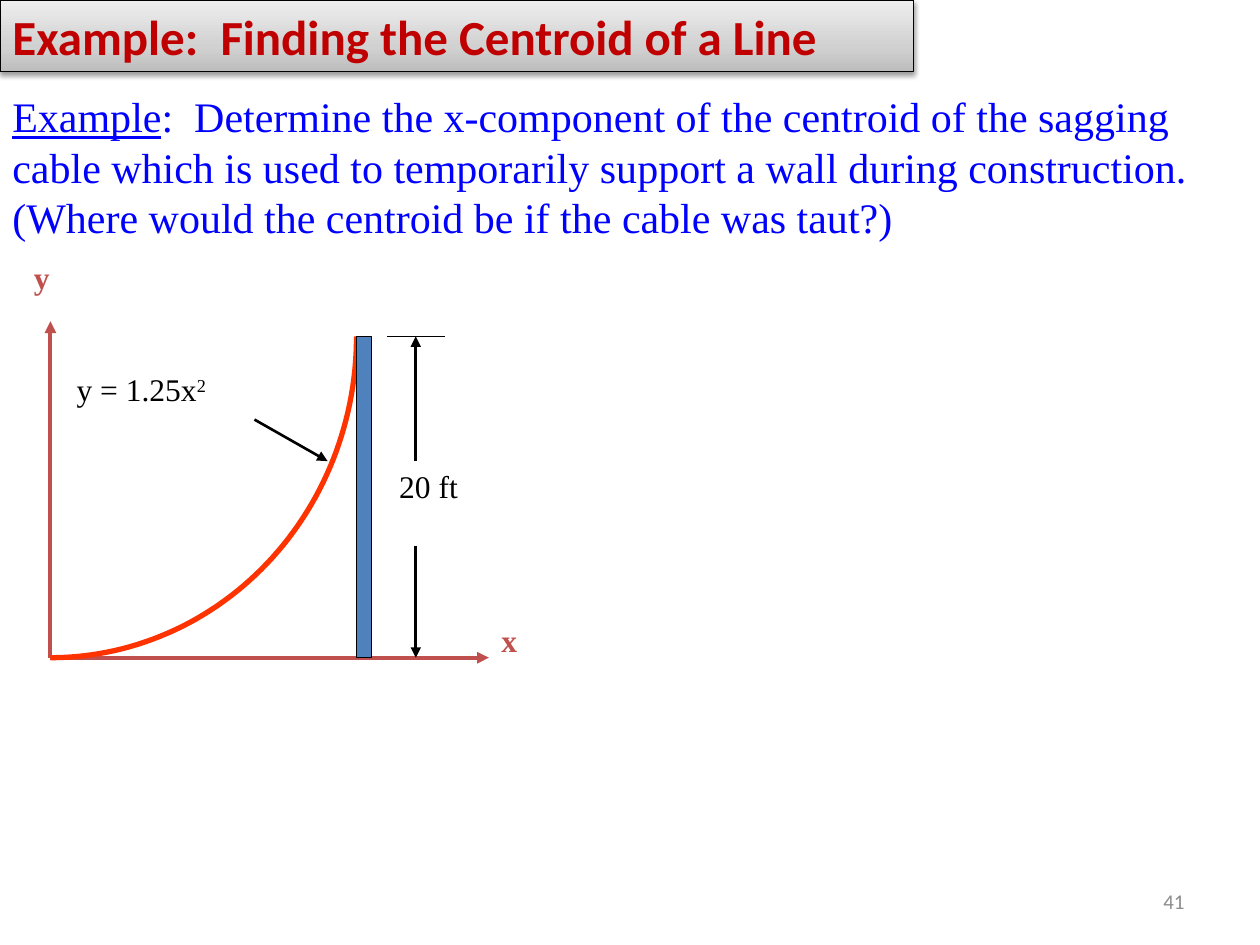
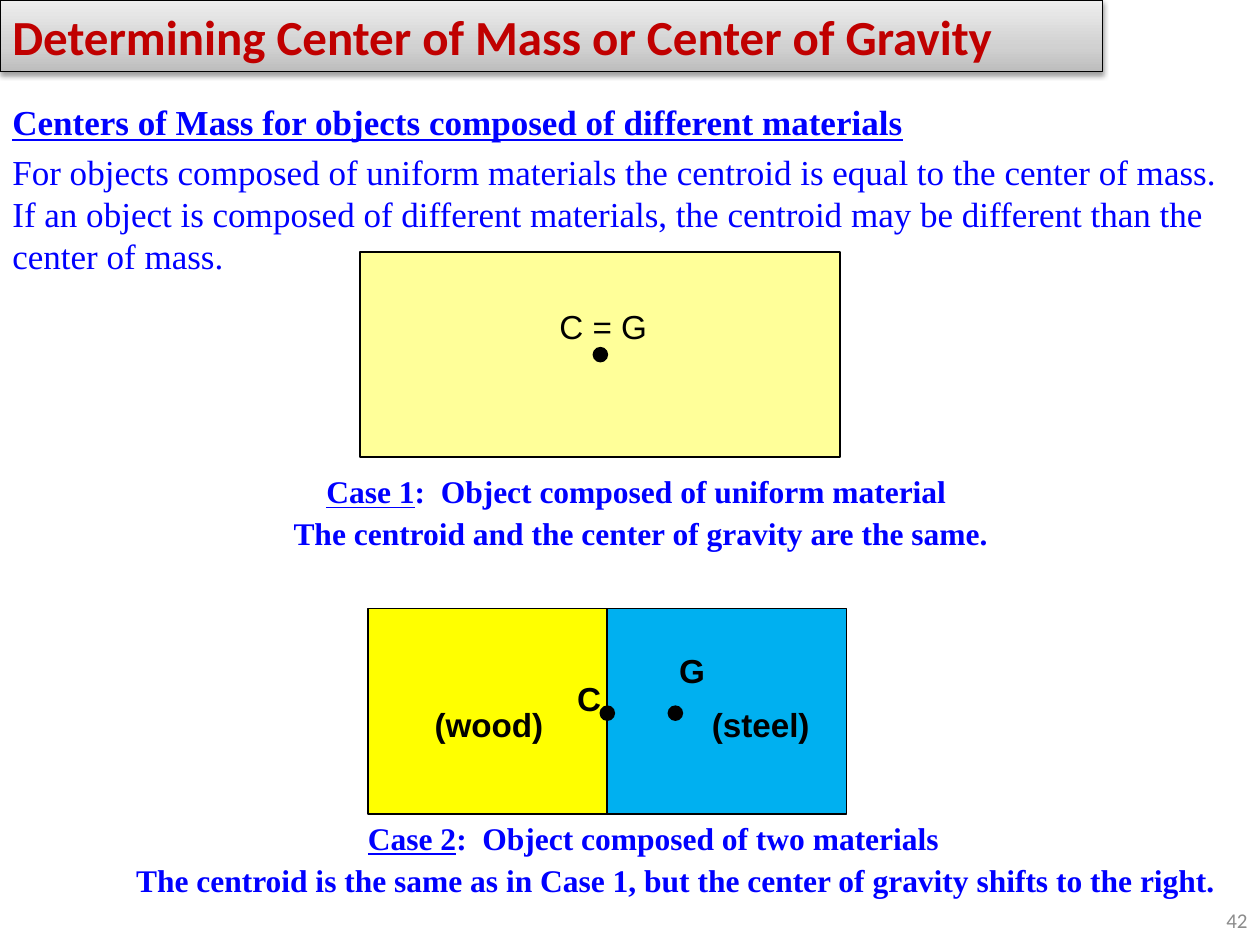
import copy
import math

from lxml import etree
from pptx import Presentation
from pptx.dml.color import RGBColor
from pptx.enum import shapes, text
from pptx.oxml import ns
from pptx.util import Inches, Pt

COLORS = {
    "black": "000000", "title": "C00000", "body": "0000FF", "number": "8C8C8C",
    "axis": "C0504D", "cable": "FF3300", "wall": "4F81BD",
    "uniform": "FFFF99", "wood": "FFFF00", "steel": "00B0F0",
}
BAND_STOPS = [(0, "BDBDBD"), (0.35, "D1D1D1"), (1, "EEEEEE")]
SERIF, SANS, TITLE_FONT = "Times New Roman", "Arial", "Calibri"
PANEL_HEIGHT = 1.63
DOT = 0.11


def rgb(name):
    return RGBColor.from_string(COLORS[name])


def sub_element(parent, tag, **attributes):
    return etree.SubElement(parent, ns.qn(tag), attributes)


# Text
def add_runs(paragraph, runs, size, font, color, bold=False):
    """Each run is (words, style); style may hold "underline" or "superscript"."""
    for words, style in runs:
        run = paragraph.add_run()
        run.text = words
        run.font.size = Pt(size)
        run.font.name = font
        run.font.bold = bold
        run.font.color.rgb = rgb(color)
        if style == "underline":
            run.font.underline = True
        elif style == "superscript":
            run.font._element.set("baseline", "30000")


def add_text(slide, box, runs, size, font=SERIF, color="black", bold=False, inset=True):
    frame = slide.shapes.add_textbox(*map(Inches, box)).text_frame
    frame.word_wrap = True
    if not inset:
        frame.margin_left = frame.margin_right = 0
        frame.margin_top = frame.margin_bottom = 0
    add_runs(frame.paragraphs[0], runs, size, font, color, bold)
    return frame


def add_label(slide, box, words, bold=True):
    add_text(slide, box, [(words, "")], 19, SANS, bold=bold, inset=False)


def add_caption(slide, box, runs):
    add_text(slide, box, runs, 18, color="body", bold=True, inset=False)


# Shapes and lines
def add_filled(slide, box, color, line_width=1.0, kind=shapes.MSO_SHAPE.RECTANGLE):
    shape = slide.shapes.add_shape(kind, *map(Inches, box))
    shape.shadow.inherit = False
    shape.fill.solid()
    shape.fill.fore_color.rgb = rgb(color)
    shape.line.color.rgb = rgb("black")
    shape.line.width = Pt(line_width)
    return shape


def add_dot(slide, x, y):
    box = (x - DOT / 2, y - DOT / 2, DOT, DOT)
    add_filled(slide, box, "black", kind=shapes.MSO_SHAPE.OVAL)


def add_line(slide, start, end, color="black", width=1.5, arrow=True):
    connector = slide.shapes.add_connector(
        shapes.MSO_CONNECTOR.STRAIGHT, *map(Inches, start + end))
    connector.line.color.rgb = rgb(color)
    connector.line.width = Pt(width)
    if arrow:
        sub_element(connector.line._get_or_add_ln(), "a:tailEnd", type="triangle")
    sub_element(connector._element.spPr, "a:effectLst")


def add_quarter_arc(slide, left, bottom, width, height, color, steps=60):
    """Curve that leaves the lower left corner flat and rises to the upper right."""
    points = []
    for step in range(steps + 1):
        angle = math.pi / 2 * step / steps
        points.append((Inches(left + width * math.sin(angle)),
                       Inches(bottom - height * (1 - math.cos(angle)))))
    builder = slide.shapes.build_freeform(*points[0])
    builder.add_line_segments(points[1:], close=False)
    shape = builder.convert_to_shape()
    shape.shadow.inherit = False
    shape.fill.background()
    shape.line.color.rgb = rgb(color)
    shape.line.width = Pt(3)


# Shared slide parts
def add_title(slide, words, width):
    band = add_filled(slide, (0, 0, width, 0.57), "black", 0.75)
    band.fill.gradient()
    band.fill.gradient_angle = 90
    stop_list = band._element.spPr.find(".//" + ns.qn("a:gsLst"))
    stop_list.append(copy.deepcopy(stop_list[0]))
    for stop, (position, color) in zip(band.fill.gradient_stops, BAND_STOPS):
        stop.position = position
        stop.color.rgb = RGBColor.from_string(color)

    effects = band._element.spPr.find(ns.qn("a:effectLst"))
    shadow = sub_element(effects, "a:outerShdw", blurRad=str(Pt(3.1)), dist=str(Pt(1.6)),
                         dir="5400000", rotWithShape="0")
    shadow_color = sub_element(shadow, "a:srgbClr", val=COLORS["black"])
    sub_element(shadow_color, "a:alpha", val="38000")

    frame = band.text_frame
    frame.word_wrap = True
    frame.vertical_anchor = text.MSO_ANCHOR.TOP
    paragraph = frame.paragraphs[0]
    paragraph.alignment = text.PP_ALIGN.LEFT
    add_runs(paragraph, [(words, "")], 28, TITLE_FONT, "title", True)


def add_number(slide, number, left, top):
    frame = add_text(slide, (left, top, 2.33, 0.4), [(str(number), "")],
                     12, TITLE_FONT, "number")
    frame.vertical_anchor = text.MSO_ANCHOR.MIDDLE
    frame.paragraphs[0].alignment = text.PP_ALIGN.RIGHT


# Slides
def build_cable_slide(slide):
    add_text(slide, (0, 0.67, 10, 1.25), [
        ("Example", "underline"),
        (":  Determine the x-component of the centroid of the sagging cable which is used "
         "to temporarily support a wall during construction.  (Where would the centroid be "
         "if the cable was taut?)", ""),
    ], 24, color="body")

    # Axes, cable and wall
    origin_x, ground = 0.4, 5.22
    wall_left, wall_top = 2.83, 2.67
    wall_height = ground - wall_top
    add_line(slide, (origin_x, ground), (origin_x, 2.55), "axis", 2.25)
    add_line(slide, (origin_x, ground), (3.88, ground), "axis", 2.25)
    add_quarter_arc(slide, origin_x, ground, wall_left - origin_x, wall_height, "cable")
    add_filled(slide, (wall_left, wall_top, 0.12, wall_height), "wall", 0.75)
    for name, left, top in (("x", 3.88, 4.88), ("y", 0.17, 2)):
        add_text(slide, (left, top, 0.45, 0.53), [(name, "")], 18, color="axis", bold=True)

    # Curve equation
    add_text(slide, (0.51, 2.89, 1.81, 0.53),
             [("y = 1.25x", ""), ("2", "superscript")], 18)
    add_line(slide, (2.02, 3.33), (2.6, 3.66))

    # Height dimension
    dimension_x = 3.3
    add_line(slide, (dimension_x, 3.66), (dimension_x, wall_top))
    add_line(slide, (dimension_x - 0.23, wall_top), (dimension_x + 0.23, wall_top),
             width=0.75, arrow=False)
    add_line(slide, (dimension_x, 4.33), (dimension_x, ground))
    add_text(slide, (3.07, 3.66, 1.02, 0.53), [("20 ft", "")], 18)

    add_number(slide, 41, 7.17, 6.95)
    add_title(slide, "Example:  Finding the Centroid of a Line", 7.25)


def build_mass_slide(slide):
    frame = add_text(slide, (0, 0.75, 10, 1.44), [
        ("Centers of Mass for objects composed of different materials", "underline"),
    ], 20, color="body", bold=True)
    paragraph = frame.add_paragraph()
    paragraph.space_before = Pt(4.5)
    add_runs(paragraph, [
        ("For objects composed of uniform materials the centroid is equal to the center of "
         "mass.  If an object is composed of different materials, the centroid may be "
         "different than the center of mass.", ""),
    ], 20, SERIF, "body")

    # Case 1: one material
    panel_left, panel_top, panel_width = 2.86, 2, 3.81
    add_filled(slide, (panel_left, panel_top, panel_width, PANEL_HEIGHT), "uniform")
    add_label(slide, (4.44, 2.43, 0.78, 0.36), "C = G", bold=False)
    add_dot(slide, panel_left + panel_width / 2, panel_top + PANEL_HEIGHT / 2)
    add_caption(slide, (2.59, 3.75, 4.97, 0.3),
                [("Case 1", "underline"), (":  Object composed of uniform material", "")])
    add_caption(slide, (2.33, 4.08, 5.57, 0.3),
                [("The centroid and the center of gravity are the same.", "")])

    # Case 2: two materials side by side
    half_left, half_top, half_width = 2.92, 4.83, 1.9
    for index, material in ((1, "steel"), (0, "wood")):
        left = half_left + index * half_width
        add_filled(slide, (left, half_top, half_width, PANEL_HEIGHT), material)
    for words, left, top, width in (("(wood)", 3.45, 5.59, 0.97), ("(steel)", 5.65, 5.59, 0.87),
                                    ("C", 4.58, 5.38, 0.21), ("G", 5.39, 5.16, 0.23)):
        add_label(slide, (left, top, width, 0.36), words)
    for x in (half_left + half_width, 5.36):
        add_dot(slide, x, 5.66)
    add_caption(slide, (2.92, 6.5, 4.58, 0.3),
                [("Case 2", "underline"), (":  Object composed of two materials", "")])
    add_caption(slide, (1.08, 6.83, 8.65, 0.3),
                [("The centroid is the same as in Case 1, but the center of gravity "
                  "shifts to the right.", "")])

    add_number(slide, 42, 7.67, 7.1)
    add_title(slide, "Determining Center of Mass or Center of Gravity", 8.75)


def main():
    presentation = Presentation()
    presentation.slide_width = Inches(10)
    presentation.slide_height = Inches(7.5)
    blank = presentation.slide_layouts[6]
    for build in (build_cable_slide, build_mass_slide):
        build(presentation.slides.add_slide(blank))
    presentation.save("out.pptx")


if __name__ == "__main__":
    main()
